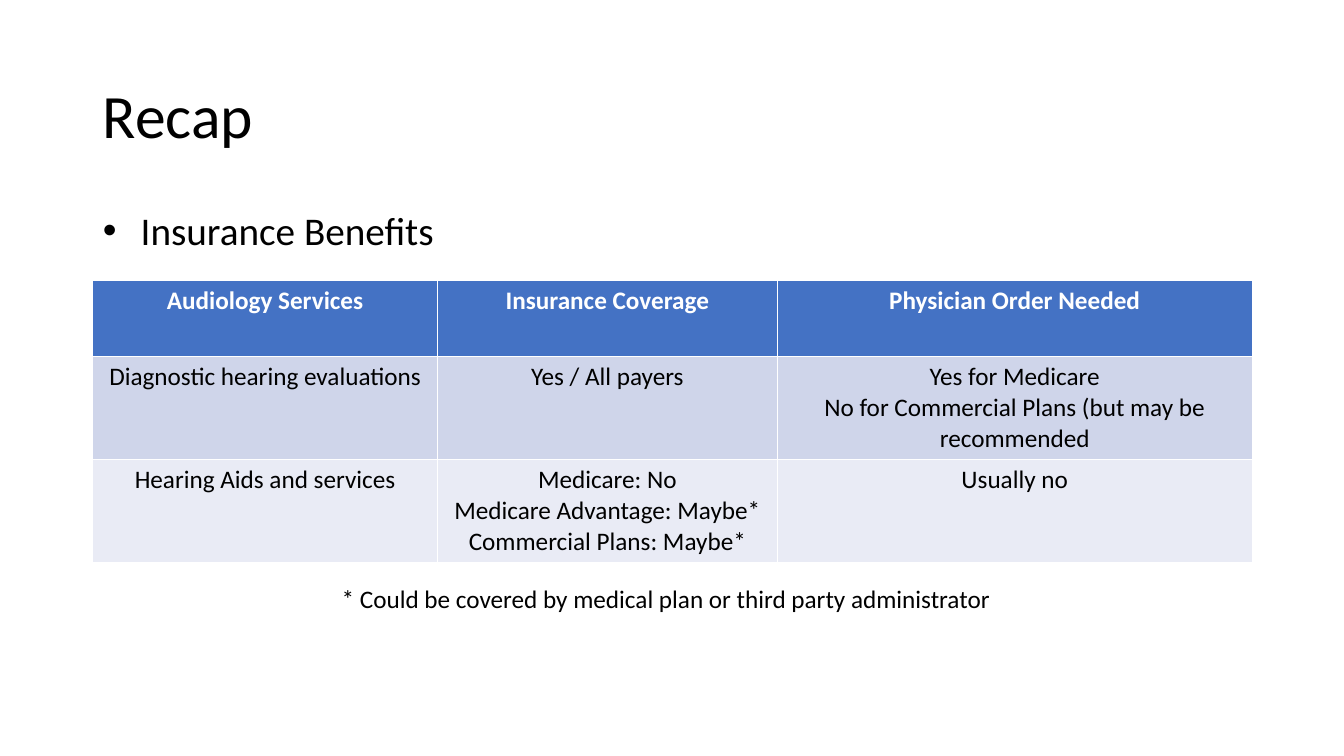
from dataclasses import dataclass

from lxml import etree
from pptx import Presentation
from pptx.dml.color import RGBColor
from pptx.enum.text import MSO_ANCHOR, MSO_AUTO_SIZE, PP_ALIGN
from pptx.oxml.ns import qn
from pptx.util import Inches, Pt

LEFT, CENTER = PP_ALIGN.LEFT, PP_ALIGN.CENTER
TOP, MIDDLE = MSO_ANCHOR.TOP, MSO_ANCHOR.MIDDLE
GROW = MSO_AUTO_SIZE.SHAPE_TO_FIT_TEXT
NO_FIT = MSO_AUTO_SIZE.NONE
TITLE_AND_CONTENT = 1


@dataclass(frozen=True)
class Theme:
    font: str = "Calibri"
    title_size: int = 44
    body_size: int = 28
    text_size: int = 18
    text: RGBColor = RGBColor(0, 0, 0)
    header_text: RGBColor = RGBColor(255, 255, 255)
    header_fill: RGBColor = RGBColor(0x44, 0x72, 0xC4)
    band_fills: tuple = (RGBColor(0xCF, 0xD5, 0xEA), RGBColor(0xE9, 0xEB, 0xF5))


@dataclass(frozen=True)
class Area:
    left: float
    top: float
    width: float
    height: float

    def lengths(self) -> tuple:
        return tuple(map(Inches, (self.left, self.top, self.width, self.height)))


@dataclass(frozen=True)
class BenefitRow:
    height: float
    cells: tuple[str, str, str]


THEME = Theme()
TITLE_AREA = Area(0.92, 0.4, 11.5, 1.45)
BODY_AREA = Area(0.92, 2, 11.5, 4.76)
TABLE_AREA = Area(0.92, 2.78, 11.5, 2.8)
FOOTNOTE_AREA = Area(3.29, 5.74, 6.75, 0.4)
COLUMN_WIDTHS = (3.42, 3.37, 4.71)
BENEFIT_ROWS = (
    BenefitRow(0.76, ("Audiology Services", "Insurance Coverage", "Physician Order Needed")),
    BenefitRow(1.02, (
        "Diagnostic hearing evaluations",
        "Yes / All payers",
        "Yes for Medicare\nNo for Commercial Plans (but may be recommended",
    )),
    BenefitRow(1.02, (
        "Hearing Aids and services",
        "Medicare: No\nMedicare Advantage: Maybe*\nCommercial Plans: Maybe*",
        "Usually no",
    )),
)


def write_text(frame, text: str, size: int, color=THEME.text, align=LEFT, bold=False) -> None:
    frame.text = text
    for paragraph in frame.paragraphs:
        paragraph.alignment = align
        font = paragraph.font
        font.name, font.size, font.bold = THEME.font, Pt(size), bold
        font.color.rgb = color


def place(shape, area: Area) -> None:
    shape.left, shape.top, shape.width, shape.height = area.lengths()


def add_bullet(paragraph) -> None:
    """Give a paragraph a hanging bullet."""
    properties = paragraph._p.get_or_add_pPr()
    properties.set("marL", str(Inches(0.25)))
    properties.set("indent", str(Inches(-0.25)))
    bullet_font = etree.Element(qn("a:buFont"), typeface="Arial")
    bullet = etree.Element(qn("a:buChar"), char="•")
    properties.insert(0, bullet_font)
    bullet_font.addnext(bullet)


def fill_placeholder(shape, area: Area, text: str, size: int, anchor, bulleted=False) -> None:
    place(shape, area)
    frame = shape.text_frame
    frame.auto_size = NO_FIT
    frame.vertical_anchor = anchor
    paragraph = frame.paragraphs[0]
    if bulleted:
        add_bullet(paragraph)
    write_text(frame, text, size)
    paragraph.line_spacing = 0.9
    paragraph.space_before = Pt(0)


def add_benefits_table(slide) -> None:
    table = slide.shapes.add_table(
        len(BENEFIT_ROWS), len(COLUMN_WIDTHS), *TABLE_AREA.lengths()).table
    for column, width in zip(table.columns, COLUMN_WIDTHS):
        column.width = Inches(width)
    for index, benefit in enumerate(BENEFIT_ROWS):
        header = index == 0
        table.rows[index].height = Inches(benefit.height)
        for cell, text in zip(table.rows[index].cells, benefit.cells):
            cell.fill.solid()
            cell.fill.fore_color.rgb = (
                THEME.header_fill if header else THEME.band_fills[(index - 1) % 2])
            color = THEME.header_text if header else THEME.text
            write_text(cell.text_frame, text, THEME.text_size, color, CENTER, header)


def add_footnote(slide, text: str) -> None:
    frame = slide.shapes.add_textbox(*FOOTNOTE_AREA.lengths()).text_frame
    frame.word_wrap = True
    frame.auto_size = GROW
    write_text(frame, text, THEME.text_size)


def main() -> None:
    deck = Presentation()
    deck.slide_width, deck.slide_height = Inches(13.33), Inches(7.5)
    slide = deck.slides.add_slide(deck.slide_layouts[TITLE_AND_CONTENT])
    fill_placeholder(slide.shapes.title, TITLE_AREA, "Recap", THEME.title_size, MIDDLE)
    fill_placeholder(slide.placeholders[1], BODY_AREA, "Insurance Benefits",
                     THEME.body_size, TOP, bulleted=True)
    add_benefits_table(slide)
    add_footnote(slide, "* Could be covered by medical plan or third party administrator")
    deck.save("out.pptx")


if __name__ == "__main__":
    main()
